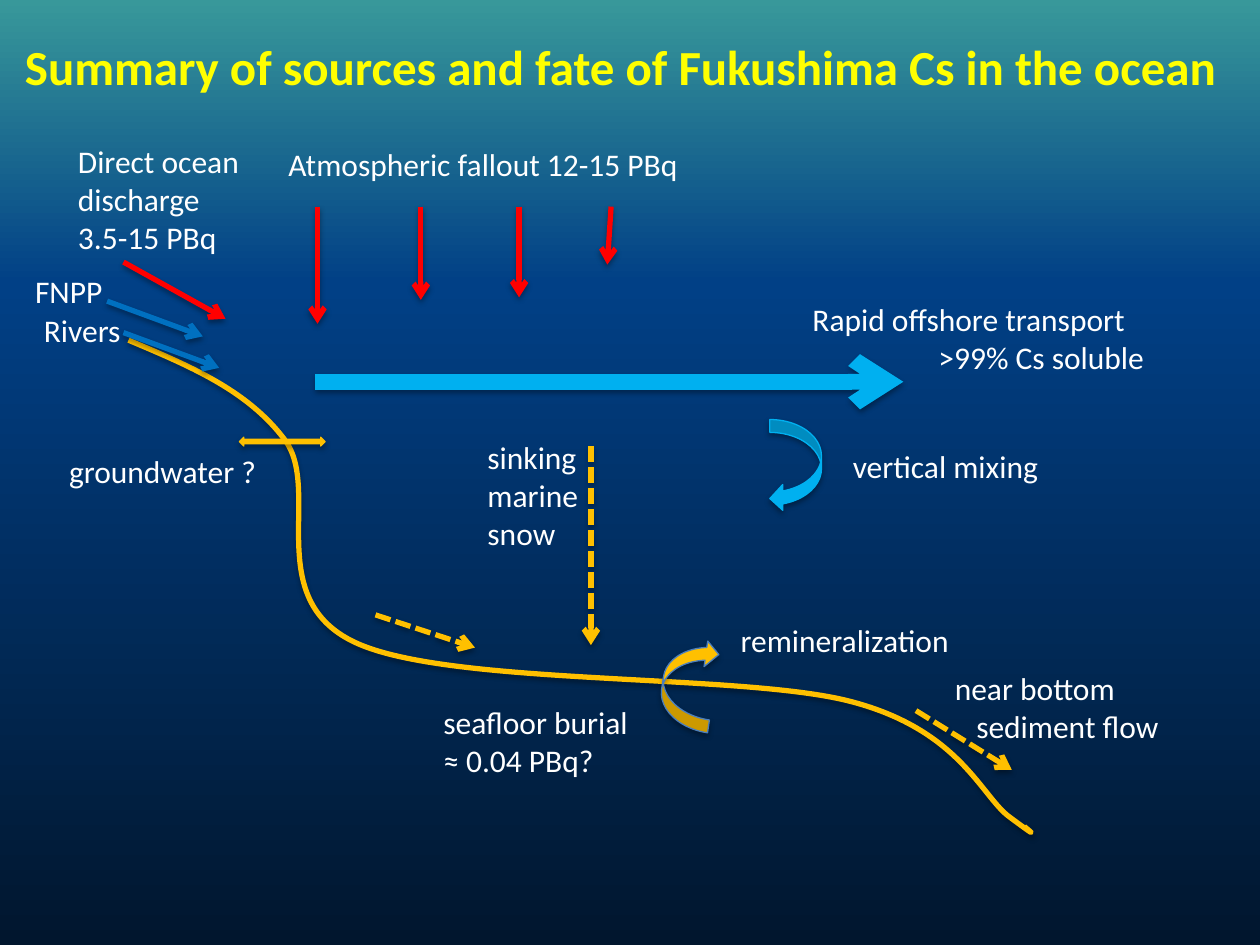
from copy import deepcopy

from pptx import Presentation
from pptx import util as u
from pptx.dml.color import RGBColor
from pptx.enum import dml, shapes, text
from pptx.oxml import parse_xml
from pptx.oxml.ns import nsdecls, qn
from pptx.oxml.xmlchemy import OxmlElement

COLS, ROWS = 100, 75
CELL = u.Inches(0.1)
FONT = "Calibri"
COLORS = {
    "title": "FFFF00", "label": "FFFFFF", "fallout": "FF0000",
    "river": "0070C0", "current": "00B0F0", "sediment": "FFC000",
    "edge": "4B7EBC", "surface": "38989A", "midwater": "014086", "deep": "01162E",
}
SHADOW = (
    f'<a:effectLst {nsdecls("a")}><a:outerShdw blurRad="39370" dist="22860" '
    'dir="5400000" rotWithShape="0"><a:srgbClr val="000000">'
    '<a:alpha val="35000"/></a:srgbClr></a:outerShdw></a:effectLst>'
)

LABELS = [
    (5.2, 10.8, 15.5, ["Direct ocean", "discharge", "3.5-15 PBq"], 0),
    (21.9, 11, 33.3, ["Atmospheric fallout 12-15 PBq"], 0),
    (63.5, 23.3, 28.6, ["Rapid offshore transport", ">99% Cs soluble"], 10),
    (4.5, 35.4, 17, ["groundwater ?"], 0),
    (1.8, 21.1, 7.7, ["FNPP"], 0),
    (2.5, 24.2, 8.2, ["Rivers"], 0),
    (66.7, 35, 16.9, ["vertical mixing"], 0),
    (37.7, 34.3, 9.9, ["sinking", "marine", "snow"], 0),
    (74.8, 52.6, 18.4, ["near bottom", "sediment flow"], 1.7),
    (34.2, 55.3, 16.8, ["seafloor burial", "≈ 0.04 PBq?"], 0),
    (57.8, 48.8, 18.7, ["remineralization"], 0),
]
FALLOUT = [(25.2, 25.2, 25.7), (33.4, 33.4, 23.8), (41.2, 41.2, 23.6), (48.5, 48.2, 21)]
INFLOWS = [(8.5, 23.9), (9.8, 26.4)]
SINKING = [(46.9, 35.4, 46.9, 51.2), (29.8, 48.8, 37.7, 51.4), (72.7, 56.4, 80.3, 61.1)]
SEAFLOOR = [
    (10.2, 27), (14.9, 29), (19.6, 30.9), (22.6, 34.9),
    (25.6, 38.9), (20.7, 47.5), (28.2, 51),
    (35.7, 54.5), (59, 53.4), (67.6, 55.7),
    (76.3, 58), (77.9, 63.3), (80.2, 64.9),
    (82.5, 66.6), (81.9, 66.1), (81.3, 65.6),
]


def grid(*cells):
    return [round(cell * CELL) for cell in cells]


def rgb(name):
    return RGBColor.from_string(COLORS[name])


def paint_water(slide):
    water = slide.background.fill
    water.gradient()
    water.gradient_angle = 270
    stops = slide._element.xpath(".//a:gsLst")[0]
    stops.append(deepcopy(stops[-1]))
    depths = [("surface", 0), ("midwater", 0.3), ("deep", 1)]
    for stop, (color, depth) in zip(water.gradient_stops, depths):
        stop.color.rgb = rgb(color)
        stop.position = depth


def add_label(slide, left, top, width, lines, indent=0, size=18, color="label", bold=False):
    height = len(lines) * size / 6 + 1
    label = slide.shapes.add_textbox(*grid(left, top, width, height))
    frame = label.text_frame
    frame.word_wrap = True
    frame.auto_size = text.MSO_AUTO_SIZE.SHAPE_TO_FIT_TEXT
    frame.text = "\n".join(lines)
    for paragraph in frame.paragraphs:
        font = paragraph.font
        font.name, font.size, font.bold = FONT, u.Pt(size), bold
        font.color.rgb = rgb(color)
    if indent:
        frame.paragraphs[-1]._p.get_or_add_pPr().set("marL", str(grid(indent)[0]))


def finish_outline(shape, color, weight):
    shape.line.color.rgb = rgb(color)
    shape.line.width = u.Pt(weight)
    shape._element.spPr.append(parse_xml(SHADOW))


def add_flow(slide, start, end, color, weight=3, dashed=False):
    flow = slide.shapes.add_connector(shapes.MSO_CONNECTOR.STRAIGHT, *grid(*start, *end))
    finish_outline(flow, color, weight)
    if dashed:
        flow.line.dash_style = dml.MSO_LINE.SQUARE_DOT
    head = OxmlElement("a:tailEnd")
    head.set("type", "arrow")
    flow._element.spPr.find(qn("a:ln")).append(head)


def add_block_arrow(slide, kind, box, color, edge, rotation=0):
    arrow = slide.shapes.add_shape(kind, *grid(*box))
    arrow.rotation = rotation
    arrow.fill.solid()
    arrow.fill.fore_color.rgb = rgb(color)
    finish_outline(arrow, edge, 0.75)


def add_curve(slide, points, color, weight):
    start, *controls = [grid(*point) for point in points]
    builder = slide.shapes.build_freeform(*start)
    builder.add_line_segments(controls, close=False)
    curve = builder.convert_to_shape()
    segments = curve._element.xpath(".//a:lnTo")
    for first in range(0, len(segments), 3):
        bezier = OxmlElement("a:cubicBezTo")
        segments[first].addprevious(bezier)
        for segment in segments[first:first + 3]:
            bezier.append(segment[0])
            segment.getparent().remove(segment)
    curve.fill.background()
    finish_outline(curve, color, weight)


def main():
    deck = Presentation()
    deck.slide_width, deck.slide_height = COLS * CELL, ROWS * CELL
    slide = deck.slides.add_slide(deck.slide_layouts[6])
    paint_water(slide)

    add_label(slide, 1, 2.4, 97.6,
              ["Summary of sources and fate of Fukushima Cs in the ocean"],
              size=28, color="title", bold=True)
    add_curve(slide, SEAFLOOR, "sediment", 3)

    add_flow(slide, (9.8, 20.8), (17.9, 25.3), "fallout")
    for top, tip, depth in FALLOUT:
        add_flow(slide, (top, 16.4), (tip, depth), "fallout")
    for x, y in INFLOWS:
        add_flow(slide, (x, y), (x + 7.6, y + 2.8), "river")
    for x, y, end_x, end_y in SINKING:
        add_flow(slide, (x, y), (end_x, end_y), "sediment", dashed=True)
    add_flow(slide, (25, 30.3), (71.7, 30.3), "current", weight=9)

    bend = shapes.MSO_SHAPE.CURVED_LEFT_ARROW
    add_block_arrow(slide, bend, (61.1, 33.3, 4.1, 7.3), "current", "current")
    add_block_arrow(slide, bend, (52.6, 50.6, 4.1, 7.3), "sediment", "edge", 188.2)
    add_block_arrow(slide, shapes.MSO_SHAPE.LEFT_RIGHT_ARROW,
                    (19, 34.7, 6.8, 0.7), "sediment", "sediment")

    for label in LABELS:
        add_label(slide, *label)
    deck.save("out.pptx")


if __name__ == "__main__":
    main()
